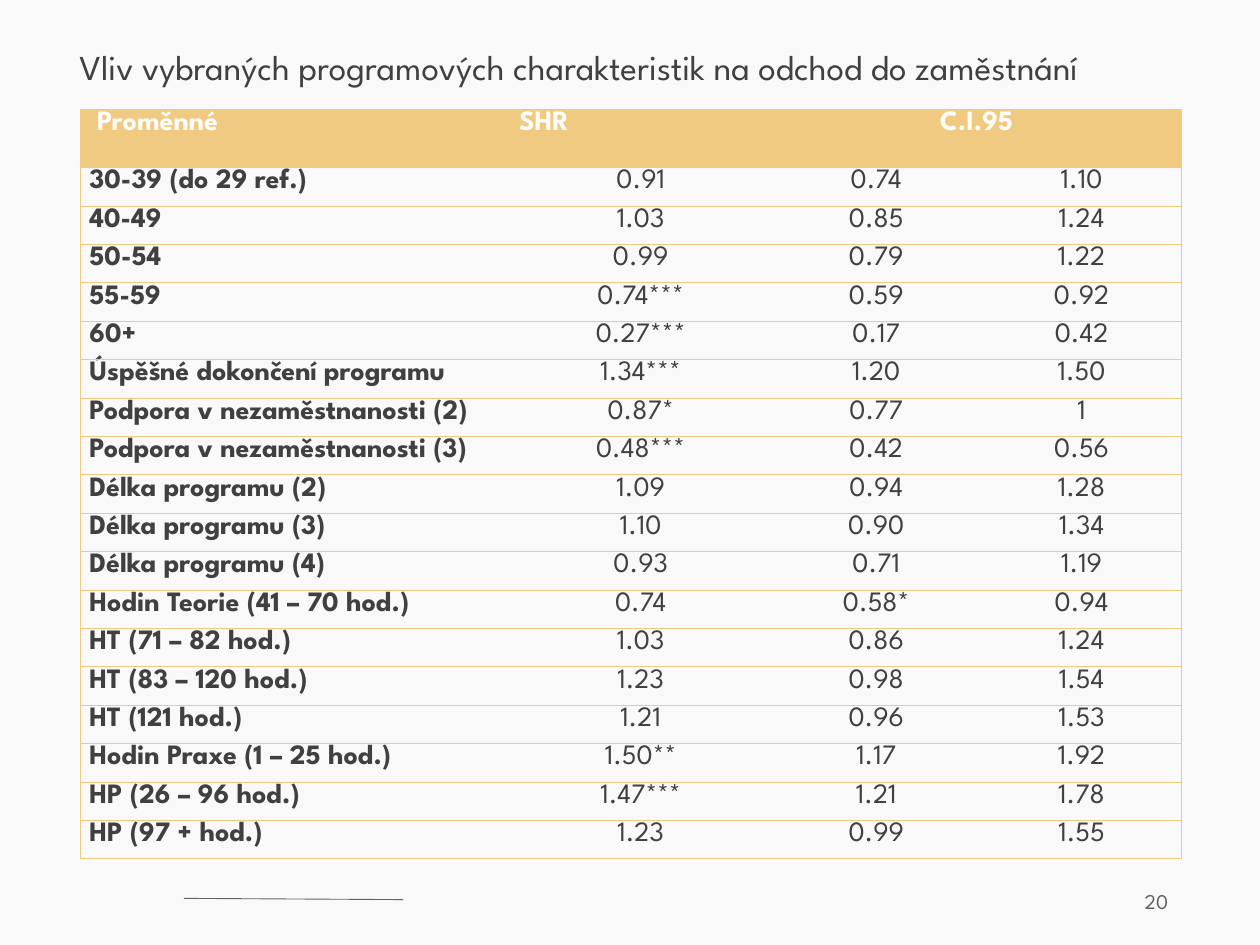
from lxml.etree import SubElement as Sub
from pptx import Presentation
from pptx.dml.color import RGBColor as RGB
from pptx.enum.shapes import MSO_CONNECTOR as Conn
from pptx.enum.text import MSO_ANCHOR as Anchor, PP_ALIGN as Align
from pptx.oxml import parse_xml
from pptx.oxml.ns import nsdecls, qn
from pptx.util import Inches, Pt

TITLE = "Vliv vybraných programových charakteristik na odchod do zaměstnání"
PAGE = "20"
HEAD = ("Proměnné", "SHR", "C.I.95", "")
ROWS = [
    ("30-39 (do 29 ref.)", "0.91", "0.74", "1.10"),
    ("40-49", "1.03", "0.85", "1.24"),
    ("50-54", "0.99", "0.79", "1.22"),
    ("55-59", "0.74***", "0.59", "0.92"),
    ("60+", "0.27***", "0.17", "0.42"),
    ("Úspěšné dokončení programu", "1.34***", "1.20", "1.50"),
    ("Podpora v nezaměstnanosti (2)", "0.87*", "0.77", "1"),
    ("Podpora v nezaměstnanosti (3)", "0.48***", "0.42", "0.56"),
    ("Délka programu (2)", "1.09", "0.94", "1.28"),
    ("Délka programu (3)", "1.10", "0.90", "1.34"),
    ("Délka programu (4)", "0.93", "0.71", "1.19"),
    ("Hodin Teorie (41 – 70 hod.)", "0.74", "0.58*", "0.94"),
    ("HT (71 – 82 hod.)", "1.03", "0.86", "1.24"),
    ("HT (83 – 120 hod.)", "1.23", "0.98", "1.54"),
    ("HT (121 hod.)", "1.21", "0.96", "1.53"),
    ("Hodin Praxe (1 – 25 hod.)", "1.50**", "1.17", "1.92"),
    ("HP (26 – 96 hod.)", "1.47***", "1.21", "1.78"),
    ("HP (97 + hod.)", "1.23", "0.99", "1.55"),
]
WIDTHS = (3.41, 2.07, 1.67, 1.59)
HEAD_H, TABLE_H = 0.46, 5.95

FONT = "League Spartan"
PAPER = RGB(0xF9, 0xF9, 0xF9)
INK = RGB(0x40, 0x40, 0x40)
GRAY = RGB(0x63, 0x63, 0x63)
GOLD = RGB(0xF0, 0xCA, 0x81)
CREAM = RGB(0xFE, 0xFC, 0xF8)


def style(para, size, color, bold=False, align=Align.LEFT):
    para.alignment = align
    font = para.font
    font.name, font.size, font.bold = FONT, Pt(size), bold
    font.color.rgb = color


def add_text(slide, box, text, size, color, align=Align.LEFT, pad=0.0):
    frame = slide.shapes.add_textbox(*map(Inches, box)).text_frame
    frame.word_wrap = True
    frame.vertical_anchor = Anchor.MIDDLE
    frame.margin_left = frame.margin_right = Inches(pad)
    frame.margin_top = frame.margin_bottom = 0
    para = frame.paragraphs[0]
    para.text = text
    style(para, size, color, align=align)
    return para


def set_edges(cell, shown):
    props = cell._tc.get_or_add_tcPr()
    for spot, side in enumerate("LRTB"):
        line = parse_xml(f'<a:ln{side} {nsdecls("a")} w="{Pt(0.5)}"/>')
        if side in shown:
            fill = Sub(line, qn("a:solidFill"))
            Sub(fill, qn("a:srgbClr"), val=str(GOLD))
        else:
            Sub(line, qn("a:noFill"))
        props.insert(spot, line)


def fill_cell(cell, text, row, col):
    head = row == 0
    cell.margin_left = Inches(0.13 if head and col == 0 else 0.07)
    cell.margin_right = Inches(0.07)
    cell.margin_top = cell.margin_bottom = 0
    if head:
        cell.fill.solid()
        cell.fill.fore_color.rgb = GOLD
    else:
        cell.fill.background()
    ends = {0: "L", len(WIDTHS) - 1: "R"}
    set_edges(cell, "TB" + ends.get(col, ""))
    para = cell.text_frame.paragraphs[0]
    para.text = text
    left = col == 0 or (head and col == 1)
    style(para, 16, CREAM if head else INK, head or col == 0,
          Align.LEFT if left else Align.CENTER)
    para.line_spacing = 1.07
    para.space_after = Pt(3)


def add_grid(slide):
    data = [HEAD] + ROWS
    grid = slide.shapes.add_table(
        len(data), len(WIDTHS), Inches(0.64), Inches(0.87),
        Inches(sum(WIDTHS)), Inches(TABLE_H)).table
    grid.horz_banding = False
    for col, width in zip(grid.columns, WIDTHS):
        col.width = Inches(width)
    step = (TABLE_H - HEAD_H) / len(ROWS)
    for row, texts in enumerate(data):
        grid.rows[row].height = Inches(step if row else HEAD_H)
        for col, text in enumerate(texts):
            fill_cell(grid.cell(row, col), text, row, col)
    grid.cell(0, 2).merge(grid.cell(0, 3))


def main():
    deck = Presentation()
    deck.slide_width, deck.slide_height = Inches(10), Inches(7.5)
    slide = deck.slides.add_slide(deck.slide_layouts[6])
    back = slide.background.fill
    back.solid()
    back.fore_color.rgb = PAPER

    rule = slide.shapes.add_connector(
        Conn.STRAIGHT, *map(Inches, (1.46, 7.13, 3.2, 7.14)))
    rule.line.color.rgb = GRAY
    rule.line.width = Pt(0.5)
    Sub(rule._element.spPr, qn("a:effectLst"))

    add_text(slide, (7.12, 6.95, 2.25, 0.4), PAGE, 12, GRAY, Align.RIGHT, 0.1)
    title = add_text(slide, (0.63, 0.35, 9.15, 0.4), TITLE, 20, INK)
    title.line_spacing = 0.9
    add_grid(slide)
    deck.save("out.pptx")


if __name__ == "__main__":
    main()
